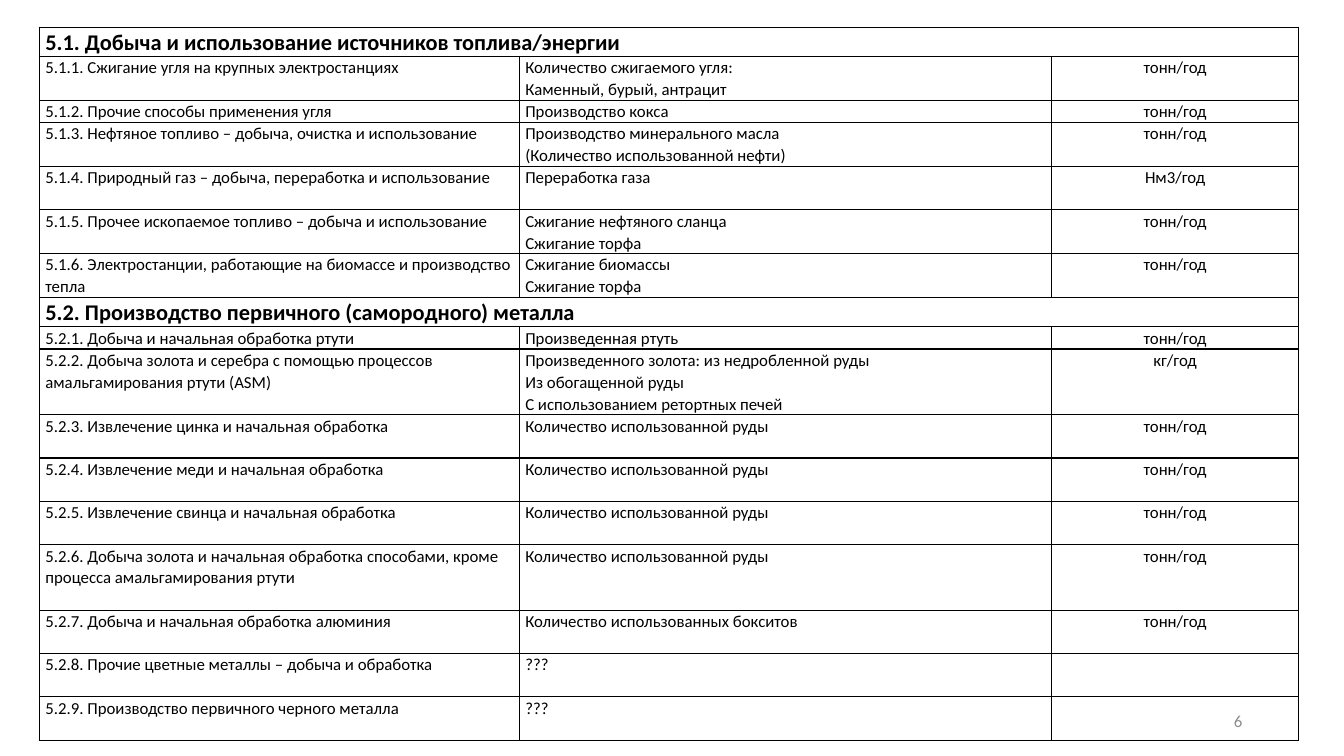
from dataclasses import dataclass

from lxml.etree import SubElement
from pptx import Presentation
from pptx.dml.color import RGBColor
from pptx.enum.text import MSO_ANCHOR, PP_ALIGN
from pptx.oxml.ns import qn
from pptx.util import Inches, Pt


@dataclass(frozen=True)
class Theme:
    font: str = "Calibri"
    ink: str = "000000"
    muted: str = "8C8C8C"
    heading_size: int = 16
    body_size: int = 12
    border_width: int = 1
    line_spacing: float = 1.07


THEME = Theme()
TONNES = "тонн/год"
ORE = ["Количество использованной руды"]

# Each section: heading, then (source, activity lines, unit, height in text lines)
SECTIONS = [
    ("5.1. Добыча и использование источников топлива/энергии", [
        ("5.1.1. Сжигание угля на крупных электростанциях",
         ["Количество сжигаемого угля:", "Каменный, бурый, антрацит"], TONNES, 2),
        ("5.1.2. Прочие способы применения угля", ["Производство кокса"], TONNES, 1),
        ("5.1.3. Нефтяное топливо – добыча, очистка и использование",
         ["Производство минерального масла", "(Количество использованной нефти)"], TONNES, 2),
        ("5.1.4. Природный газ – добыча, переработка и использование",
         ["Переработка газа"], "Нм3/год", 2),
        ("5.1.5. Прочее ископаемое топливо – добыча и использование",
         ["Сжигание нефтяного сланца", "Сжигание торфа"], TONNES, 2),
        ("5.1.6. Электростанции, работающие на биомассе и производство тепла",
         ["Сжигание биомассы", "Сжигание торфа"], TONNES, 2),
    ]),
    ("5.2. Производство первичного (самородного) металла", [
        ("5.2.1. Добыча и начальная обработка ртути", ["Произведенная ртуть"], TONNES, 1),
        ("5.2.2. Добыча золота и серебра с помощью процессов амальгамирования ртути (ASM)",
         ["Произведенного золота: из недробленной руды", "Из обогащенной руды",
          "С использованием ретортных печей"], "кг/год", 3),
        ("5.2.3. Извлечение цинка и начальная обработка", ORE, TONNES, 2),
        ("5.2.4. Извлечение меди и начальная обработка", ORE, TONNES, 2),
        ("5.2.5. Извлечение свинца и начальная обработка", ORE, TONNES, 2),
        ("5.2.6. Добыча золота и начальная обработка способами, кроме процесса "
         "амальгамирования ртути", ORE, TONNES, 3),
        ("5.2.7. Добыча и начальная обработка алюминия",
         ["Количество использованных бокситов"], TONNES, 2),
        ("5.2.8. Прочие цветные металлы – добыча и обработка", ["???"], "", 2),
        ("5.2.9. Производство первичного черного металла", ["???"], "", 2),
    ]),
]
PAGE_NUMBER = "6"

COLUMN_WIDTHS = [4.76, 5.28, 2.45]
HEADING_HEIGHT = 0.29
HEIGHT_BY_LINES = {1: 0.22, 2: 0.43, 3: 0.65}
TABLE_LEFT, TABLE_TOP = 0.39, 0.27


def add_text(paragraph, text, size, color, bold=False):
    run = paragraph.add_run()
    run.text = text
    run.font.name = THEME.font
    run.font.size = Pt(size)
    run.font.bold = bold
    run.font.color.rgb = RGBColor.from_string(color)


def fill_cell(cell, lines, size, bold=False, alignment=PP_ALIGN.LEFT):
    for index, line in enumerate(lines):
        frame = cell.text_frame
        paragraph = frame.paragraphs[0] if index == 0 else frame.add_paragraph()
        paragraph.alignment = alignment
        paragraph.line_spacing = THEME.line_spacing
        if line:
            add_text(paragraph, line, size, THEME.ink, bold)


def style_cell(cell):
    cell.margin_left = cell.margin_right = Inches(0.06)
    cell.margin_top = cell.margin_bottom = 0
    properties = cell._tc.get_or_add_tcPr()
    for side in ("a:lnL", "a:lnR", "a:lnT", "a:lnB"):
        border = SubElement(properties, qn(side), w=str(Pt(THEME.border_width)))
        solid = SubElement(border, qn("a:solidFill"))
        SubElement(solid, qn("a:srgbClr"), val=THEME.ink)
    cell.fill.background()


def add_source_table(slide):
    row_count = sum(1 + len(entries) for _, entries in SECTIONS)
    table = slide.shapes.add_table(
        row_count, len(COLUMN_WIDTHS), Inches(TABLE_LEFT), Inches(TABLE_TOP),
        Inches(sum(COLUMN_WIDTHS)), Inches(7.06)).table
    table.first_row = table.horz_banding = False
    for column, width in zip(table.columns, COLUMN_WIDTHS):
        column.width = Inches(width)
    for cell in table.iter_cells():
        style_cell(cell)

    rows = iter(table.rows)
    for heading, entries in SECTIONS:
        row = next(rows)
        row.height = Inches(HEADING_HEIGHT)
        row.cells[0].merge(row.cells[len(COLUMN_WIDTHS) - 1])
        fill_cell(row.cells[0], [heading], THEME.heading_size, bold=True)
        for source, activity, unit, line_count in entries:
            row = next(rows)
            row.height = Inches(HEIGHT_BY_LINES[line_count])
            fill_cell(row.cells[0], [source], THEME.body_size)
            fill_cell(row.cells[1], activity, THEME.body_size)
            fill_cell(row.cells[2], [unit], THEME.body_size, alignment=PP_ALIGN.CENTER)


def add_page_number(slide):
    frame = slide.shapes.add_textbox(
        Inches(9.42), Inches(6.95), Inches(3), Inches(0.4)).text_frame
    frame.word_wrap = True
    frame.vertical_anchor = MSO_ANCHOR.MIDDLE
    paragraph = frame.paragraphs[0]
    paragraph.alignment = PP_ALIGN.RIGHT
    add_text(paragraph, PAGE_NUMBER, THEME.body_size, THEME.muted)


def main():
    presentation = Presentation()
    presentation.slide_width = Inches(13.33)
    presentation.slide_height = Inches(7.5)
    slide = presentation.slides.add_slide(presentation.slide_layouts[6])
    add_source_table(slide)
    add_page_number(slide)
    presentation.save("out.pptx")


if __name__ == "__main__":
    main()
